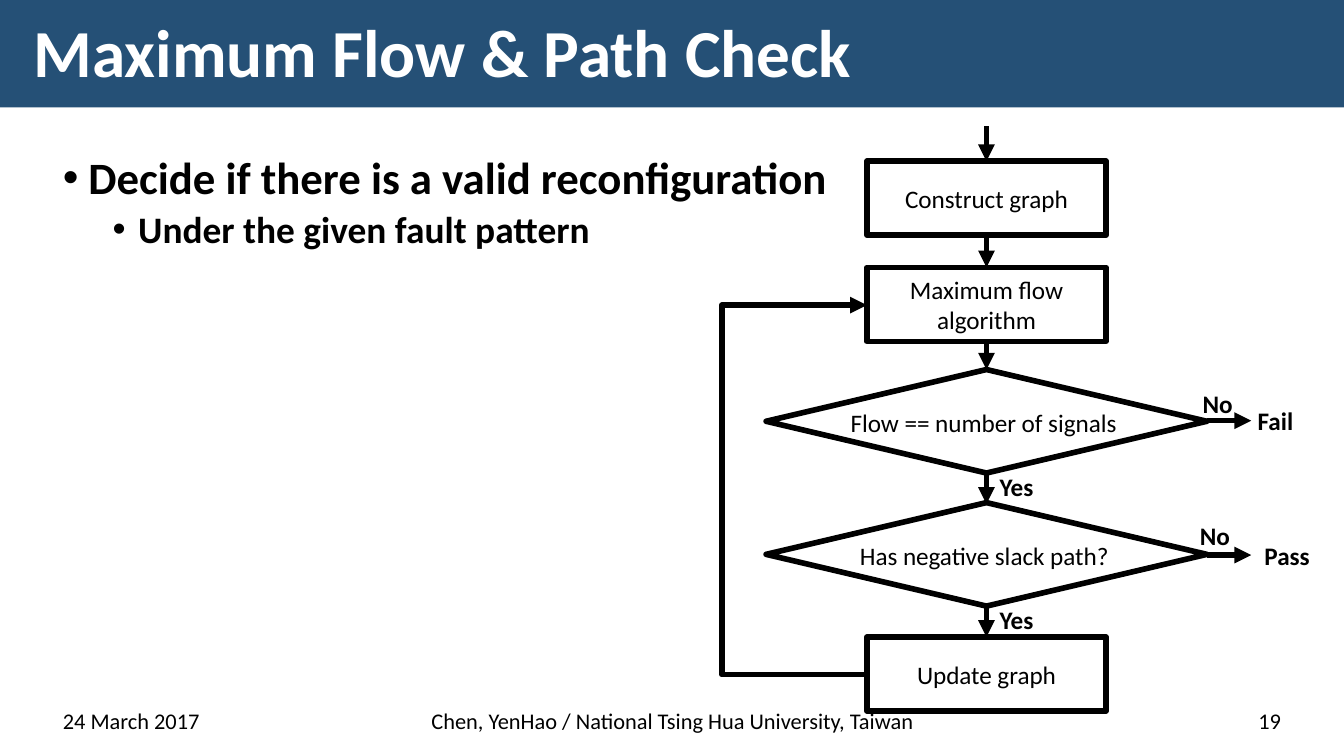
"""Build a slide with a heading, two bullets and a flow chart of the path check."""
import pptx
import pptx.dml.color
import pptx.enum.shapes
import pptx.enum.text
import pptx.oxml
import pptx.oxml.ns
import pptx.util

Inches = pptx.util.Inches
Pt = pptx.util.Pt
Shape = pptx.enum.shapes.MSO_SHAPE
Anchor = pptx.enum.text.MSO_ANCHOR
Align = pptx.enum.text.PP_ALIGN
NAMESPACE = pptx.oxml.ns.nsdecls("a")


def color(value):
    """Turn a hex string into a colour."""
    return pptx.dml.color.RGBColor.from_string(value)


def write(frame, text, size=13.5, bold=False, hue="000000", align=Align.LEFT,
          anchor=Anchor.TOP, wrap=True, spacing=1.0, new=False):
    """Write one formatted paragraph into a text frame and return it."""
    frame.word_wrap = wrap
    frame.auto_size = pptx.enum.text.MSO_AUTO_SIZE.NONE
    frame.vertical_anchor = anchor
    para = frame.add_paragraph() if new else frame.paragraphs[0]
    para.alignment = align
    para.line_spacing = spacing
    span = para.add_run()
    span.text = text
    span.font.name = "Calibri"
    span.font.size = Pt(size)
    span.font.bold = bold
    span.font.color.rgb = color(hue)
    return para


deck = pptx.Presentation()
deck.slide_width = Inches(10)
deck.slide_height = Inches(10 * 9 / 16)
page = deck.slides.add_slide(deck.slide_layouts[5])
shapes = page.shapes

title = shapes.title
title.left, title.top = Inches(0.15), Inches(0.1)
title.width, title.height = Inches(9.7), Inches(0.63)
write(title.text_frame, "Maximum Flow & Path Check", size=36, bold=True, hue="FFFFFF",
      anchor=Anchor.MIDDLE, wrap=False, spacing=0.9)

banner = shapes.add_shape(Shape.RECTANGLE, 0, 0, deck.slide_width, Inches(0.8))
banner.shadow.inherit = False
banner.fill.solid()
banner.fill.fore_color.rgb = color("255076")
banner.line.fill.background()
title.element.addprevious(banner.element)

body = shapes.add_textbox(Inches(0.37), Inches(1.11), Inches(9.26), Inches(3.95))
bullets = [
    ("Decide if there is a valid reconfiguration", 24, 0, 0.19, 7.5),
    ("Under the given fault pattern", 20, 1, 0.56, 3.8),
]
for text, size, level, indent, before in bullets:
    para = write(body.text_frame, text, size=size, bold=True, spacing=0.9, new=level > 0)
    para.level = level
    para.space_before = Pt(before)
    properties = para._p.get_or_add_pPr()
    properties.set("marL", str(Inches(indent)))
    properties.set("indent", str(Inches(-0.19)))
    properties.append(pptx.oxml.parse_xml(f'<a:buFont {NAMESPACE} typeface="Arial"/>'))
    properties.append(pptx.oxml.parse_xml(f'<a:buChar {NAMESPACE} char="•"/>'))

footers = [
    ("24 March 2017", 0.37, 2.57, Align.LEFT),
    ("Chen, YenHao / National Tsing Hua University, Taiwan", 3.04, 3.93, Align.CENTER),
    ("19", 7.06, 2.57, Align.RIGHT),
]
for text, left, width, align in footers:
    box = shapes.add_textbox(Inches(left), Inches(5.21), Inches(width), Inches(0.3))
    write(box.text_frame, text, size=12, align=align, anchor=Anchor.BOTTOM)

center = 7.34
step_width, step_height = 1.78, 0.55
check_width, check_height = 3.28, 0.77
step_left = center - step_width / 2
check_right = center + check_width / 2
outlined = []

steps = [("Construct graph", 1.2), ("Maximum flow algorithm", 1.99), ("Update graph", 4.74)]
for text, top in steps:
    step = shapes.add_shape(Shape.RECTANGLE, Inches(step_left), Inches(top),
                            Inches(step_width), Inches(step_height))
    step.fill.background()
    frame = step.text_frame
    frame.margin_left = frame.margin_right = Inches(0.07)
    frame.margin_top = frame.margin_bottom = Inches(0.04)
    write(frame, text, align=Align.CENTER, anchor=Anchor.MIDDLE)
    outlined.append(step)

for top in (2.75, 3.74):
    check = shapes.add_shape(Shape.DIAMOND, Inches(center - check_width / 2), Inches(top),
                             Inches(check_width), Inches(check_height))
    check.fill.background()
    outlined.append(check)

arrows = []
routes = [(center, start, center, end) for start, end in
          [(0.94, 1.2), (1.76, 1.99), (2.54, 2.75), (3.52, 3.75), (4.51, 4.74)]]
routes += [(check_right, middle, 9.31, middle) for middle in (3.13, 4.13)]
for route in routes:
    arrows.append(shapes.add_connector(pptx.enum.shapes.MSO_CONNECTOR.STRAIGHT,
                                       *[Inches(value) for value in route]))

loop_path = [(5.37, 5.02), (5.37, 2.27), (step_left, 2.27)]
builder = shapes.build_freeform(Inches(step_left), Inches(5.02))
builder.add_line_segments([(Inches(x), Inches(y)) for x, y in loop_path], close=False)
loop = builder.convert_to_shape()
loop.fill.background()
arrows.append(loop)

for item in outlined + arrows:
    item.line.color.rgb = color("000000")
    item.line.width = Pt(3)
    stroke = item.line._get_or_add_ln()
    stroke.append(pptx.oxml.parse_xml(f"<a:round {NAMESPACE}/>"))
    if item in arrows:
        stroke.append(pptx.oxml.parse_xml(f'<a:tailEnd {NAMESPACE} type="triangle"/>'))
    item.element.spPr.append(pptx.oxml.parse_xml(f"<a:effectLst {NAMESPACE}/>"))

labels = [
    ("Flow == number of signals", 6.23, 2.98, 2.21, False),
    ("Has negative slack path?", 6.3, 3.97, 2.08, False),
    ("Fail", 9.26, 2.97, 0.47, True),
    ("Pass", 9.31, 3.97, 0.54, True),
    ("No", 8.85, 2.84, 0.43, True),
    ("No", 8.83, 3.82, 0.43, True),
    ("Yes", center, 3.46, 0.46, True),
    ("Yes", center, 4.45, 0.46, True),
]
for text, left, top, width, bold in labels:
    label = shapes.add_textbox(Inches(left), Inches(top), Inches(width), Inches(0.33))
    write(label.text_frame, text, bold=bold, wrap=False)

deck.save("out.pptx")
